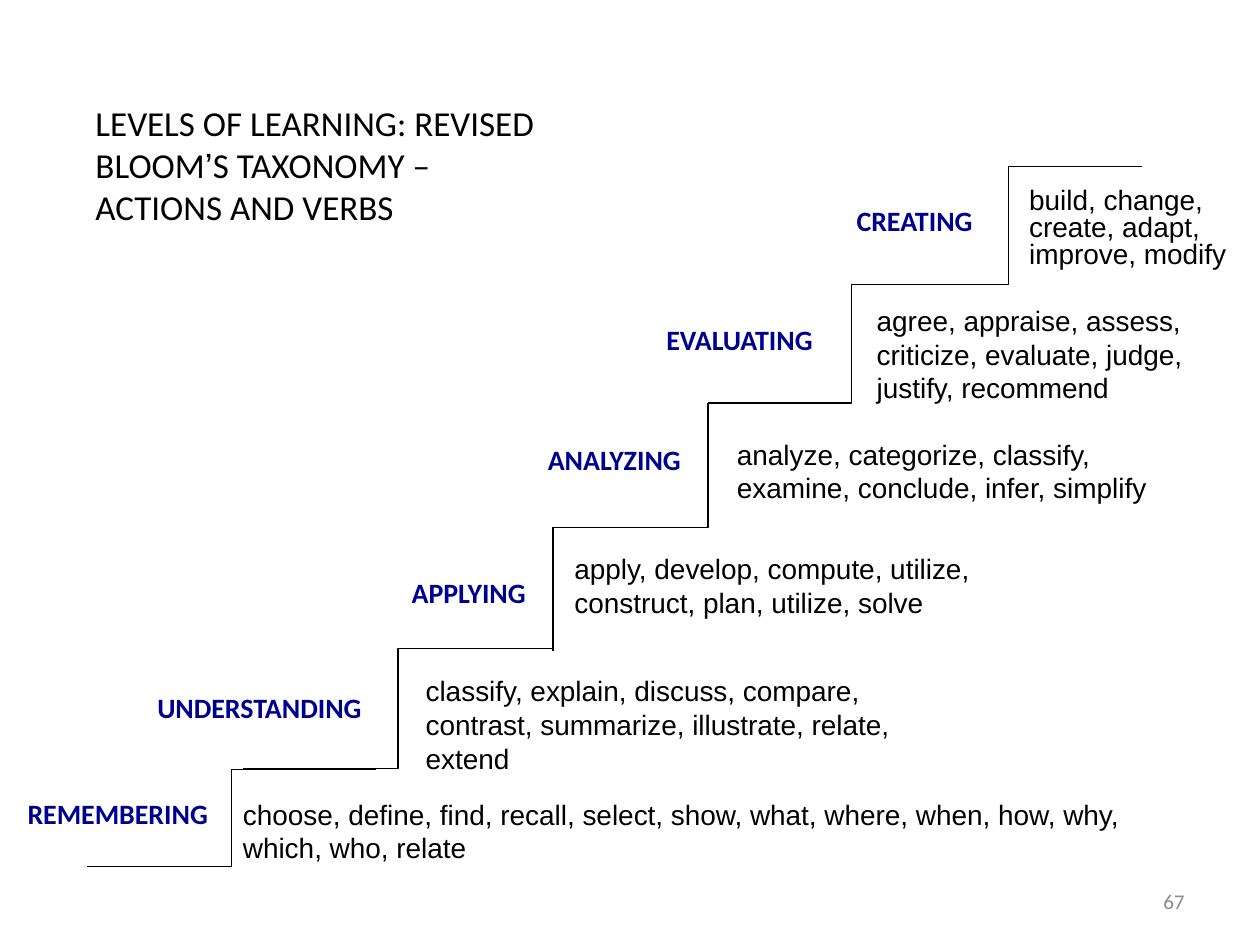
from dataclasses import dataclass

from lxml import etree
from pptx import Presentation
from pptx.dml.color import RGBColor
from pptx.enum.shapes import MSO_CONNECTOR
from pptx.enum.text import MSO_ANCHOR, MSO_AUTO_SIZE, PP_ALIGN
from pptx.oxml.ns import qn
from pptx.util import Inches, Pt

ELBOW = MSO_CONNECTOR.ELBOW
LEFT, CENTER, RIGHT = PP_ALIGN.LEFT, PP_ALIGN.CENTER, PP_ALIGN.RIGHT
TOP, MIDDLE = MSO_ANCHOR.TOP, MSO_ANCHOR.MIDDLE
GROW, FIXED = MSO_AUTO_SIZE.SHAPE_TO_FIT_TEXT, MSO_AUTO_SIZE.NONE


@dataclass(frozen=True)
class Theme:
    heading_font: str = "Calibri"
    body_font: str = "Arial"
    black: RGBColor = RGBColor(0, 0, 0)
    navy: RGBColor = RGBColor(0x00, 0x00, 0x90)
    gray: RGBColor = RGBColor(0x8C, 0x8C, 0x8C)
    title_size: int = 20
    step_size: int = 16
    number_size: int = 12
    line_width: float = 0.75


THEME = Theme()

# Level name: left, top, width, alignment
LEVELS = [
    ("REMEMBERING", 0.12, 6.27, 1.99, LEFT),
    ("UNDERSTANDING", 1.15, 5.43, 2.04, LEFT),
    ("APPLYING", 2.9, 4.52, 1.64, CENTER),
    ("ANALYZING", 4.25, 3.46, 1.36, LEFT),
    ("EVALUATING", 5.19, 2.51, 1.53, LEFT),
    ("CREATING", 6.7, 1.57, 1.33, LEFT),
]

# Verbs: box (left, top, width, height), line spacing
VERBS = [
    ("choose, define, find, recall, select, show, what, where, when, how, why, "
     "which, who, relate", (1.83, 6.28, 7.33, 0.64), None),
    ("classify, explain, discuss, compare, contrast, summarize, illustrate, "
     "relate, extend", (3.28, 5.3, 4.46, 0.91), None),
    ("apply, develop, compute, utilize, construct, plan, utilize, solve",
     (4.46, 4.33, 3.59, 0.58), None),
    ("analyze, categorize, classify, examine, conclude, infer, simplify",
     (5.75, 3.42, 3.83, 0.58), None),
    ("agree, appraise, assess, criticize, evaluate, judge, justify, recommend",
     (6.86, 2.36, 2.87, 0.82), None),
    ("build, change, create, adapt, improve, modify",
     (8.07, 1.45, 1.93, 0.76), 0.8),
]

# Steps: begin x, begin y, end x, end y, rotation in degrees, bend position
STEPS = [
    (1.93, 6.1, 4.39, 5.15, 0, 0.5),
    (4.02, 3.57, 5.99, 4.8, 270, 0.5),
    (5.62, 3.2, 7.9, 2.26, 0, 0.5),
    (0.69, 6.88, 2.98, 6.11, 0, 0.5),
    (6.78, 2.26, 9.06, 1.32, 0, 0.536),
]


def add_text(slide, lines, box, font_name, size, color, bold=False,
             alignment=LEFT, anchor=TOP, auto_size=GROW, line_spacing=None):
    shape = slide.shapes.add_textbox(*(Inches(value) for value in box))
    frame = shape.text_frame
    frame.word_wrap = True
    frame.auto_size = auto_size
    frame.vertical_anchor = anchor
    frame.text = "\n".join(lines)
    for paragraph in frame.paragraphs:
        paragraph.alignment = alignment
        if line_spacing:
            paragraph.line_spacing = line_spacing
        paragraph.font.name = font_name
        paragraph.font.size = Pt(size)
        paragraph.font.bold = bold
        paragraph.font.color.rgb = color
    return shape


def add_step(slide, begin_x, begin_y, end_x, end_y, rotation, bend):
    connector = slide.shapes.add_connector(
        ELBOW, Inches(begin_x), Inches(begin_y), Inches(end_x), Inches(end_y))
    connector.line.color.rgb = THEME.black
    connector.line.width = Pt(THEME.line_width)
    properties = connector._element.spPr
    etree.SubElement(properties, qn("a:effectLst"))
    if rotation:
        properties.find(qn("a:xfrm")).set("rot", str(rotation * 60000))
    # Position of the riser along the step
    geometry = properties.find(qn("a:prstGeom"))
    adjustments = geometry.find(qn("a:avLst"))
    if adjustments is None:
        adjustments = etree.SubElement(geometry, qn("a:avLst"))
    etree.SubElement(adjustments, qn("a:gd"), name="adj1",
                     fmla=f"val {round(bend * 100000)}")


def add_title(slide):
    shape = add_text(slide, ["", "ACTIONS AND VERBS"], (0.66, 0.76, 3.87, 1.44),
                     THEME.heading_font, THEME.title_size, THEME.black,
                     auto_size=FIXED)
    paragraph = shape.text_frame.paragraphs[0]
    for text, font_name in (
            ("LEVELS OF LEARNING: REVISED BLOOM", THEME.heading_font),
            ("’", THEME.body_font),
            ("S TAXONOMY –", THEME.heading_font)):
        run = paragraph.add_run()
        run.text = text
        run.font.name = font_name


def main():
    presentation = Presentation()
    presentation.slide_width = Inches(10)
    presentation.slide_height = Inches(7.5)
    slide = presentation.slides.add_slide(presentation.slide_layouts[6])

    # Level names
    for name, left, top, width, alignment in LEVELS:
        add_text(slide, [name], (left, top, width, 0.37), THEME.heading_font,
                 THEME.step_size, THEME.navy, bold=True, alignment=alignment)

    # Staircase
    for step in STEPS:
        add_step(slide, *step)

    # Verbs for each level
    for text, box, line_spacing in VERBS:
        add_text(slide, [text], box, THEME.body_font, THEME.step_size,
                 THEME.black, line_spacing=line_spacing)

    # Title and slide number
    add_title(slide)
    add_text(slide, ["67"], (7.17, 6.95, 2.33, 0.4), THEME.heading_font,
             THEME.number_size, THEME.gray, alignment=RIGHT, anchor=MIDDLE,
             auto_size=FIXED)

    presentation.save("out.pptx")


if __name__ == "__main__":
    main()
